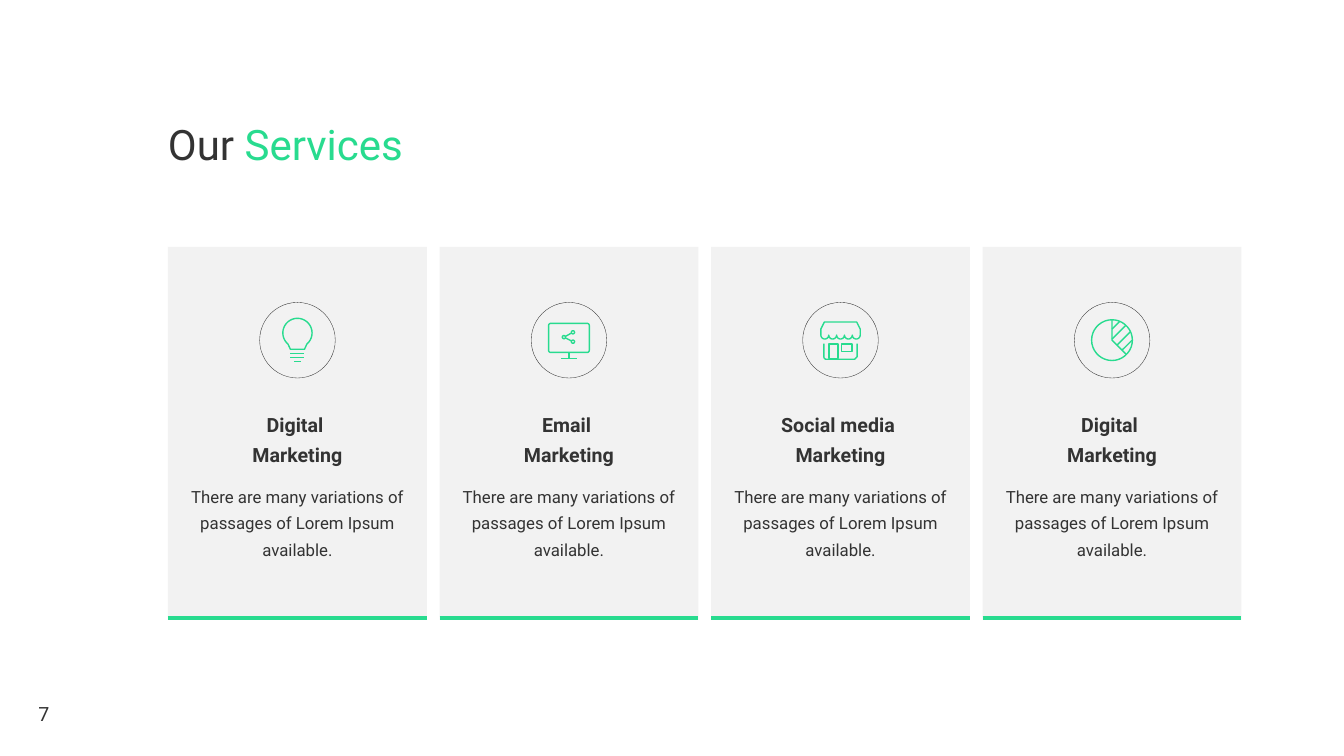
from dataclasses import dataclass
from math import cos, radians, sin

from lxml import etree
from pptx import Presentation, util as u
from pptx.dml.color import RGBColor
from pptx.enum import shapes, text
from pptx.oxml.ns import qn


@dataclass(frozen=True)
class Theme:
    font: str = "Roboto"
    ink: str = "333333"
    accent: str = "28DB8F"
    panel: str = "F2F2F2"
    title_size: int = 30
    heading_size: int = 14
    body_size: int = 12


# The grid has 160 columns and 90 rows, twelve to the inch
COLUMNS, ROWS = 160, 90
CELL = u.Inches(1) / 12
CARD_LEFT, CARD_TOP, CARD_HEIGHT = 20, 29.4, 44.4
CARDS_WIDTH, CARD_GAP = 127.8, 1.5
ACCENT_ROW = 73.6
BADGE_TOP, BADGE_SIZE = 36, 9
ICON_UNIT = 0.12

BODY = "There are many variations of passages of Lorem Ipsum available."


def grid(cells):
    return u.Emu(round(cells * CELL))


def color(value):
    return RGBColor.from_string(value)


# Icon strokes: points measured from the badge centre, in icon units
def arc(x, y, radius, start=0, end=360, step=10):
    return [(x + radius * cos(radians(a)), y + radius * sin(radians(a)))
            for a in range(start, end + 1, step)]


def frame(left, top, right, bottom):
    return [(left, top), (right, top), (right, bottom), (left, bottom), (left, top)]


def bulb():
    glass = [(-7, 9), *arc(0, -7.2, 14.5, 130, 410), (7, 9), (-7, 9)]
    return [glass] + [[(-half, y), (half, y)] for half, y in ((7, 13), (7, 17), (3.5, 21))]


def monitor():
    screen = [*arc(18, 10, 2.2, 0, 90), *arc(-18, 10, 2.2, 90, 180),
              *arc(-18, -14.5, 2.2, 180, 270), *arc(18, -14.5, 2.2, 270, 360), (20.2, 10)]
    nodes = [(4, -7.8), (-5, -3), (4, 1.5)]
    links = [[(-3.6, -3.7), (2.6, -7.1)], [(-3.6, -2.3), (2.6, 0.8)]]
    stand = [[(0, 12.2), (0, 18)], [(-8, 18), (8, 18)]]
    return [screen, *stand, *links, *(arc(x, y, 1.6, step=30) for x, y in nodes)]


def shop():
    awning = [(-19.5, -5), (-19.5, -11), (-16, -18), (16, -18), (19.5, -11), (19.5, -5)]
    for scallop in range(5):
        awning += arc(15.6 - 7.8 * scallop, -5, 3.9, 0, 180, 20)
    walls = [(-16.5, 3.5), *arc(-14, 16.5, 2.5, 180, 90, -10),
             (-14, 19), (14, 19), (16.5, 16.5), (16.5, 3.5)]
    return [awning, walls, frame(-11.5, 4, -2.5, 18.5), frame(1, 4, 11.5, 11)]


def pie():
    wedge = [(0, -20), (0, 0), (14.2, 14.2)]
    hatches = [[(0, -11), (7.5, -18.5)], [(0, -1), (13.7, -14.7)],
               [(5, 5), (18.2, -8.2)], [(10, 10), (19.8, 0.2)]]
    return [arc(0, 0, 20.2), wedge, *hatches]


CARDS = [("Digital \vMarketing", bulb), ("Email \vMarketing", monitor),
         ("Social media \vMarketing", shop), ("Digital \vMarketing", pie)]


class SlideBuilder:
    def __init__(self, deck, theme):
        self.theme = theme
        self.page = deck.slides.add_slide(deck.slide_layouts[5])

    def style(self, para, size, bold=False, align=text.PP_ALIGN.CENTER, spacing=1.0):
        para.alignment = align
        para.line_spacing = spacing
        para.space_before = u.Pt(0)
        para.font.name, para.font.size, para.font.bold = self.theme.font, u.Pt(size), bold
        para.font.color.rgb = color(self.theme.ink)

    def title(self, plain, accented, left, top, width, height):
        box = self.page.shapes.title
        box.left, box.top, box.width, box.height = map(grid, (left, top, width, height))
        body = box.text_frame
        body.auto_size = text.MSO_AUTO_SIZE.NONE
        body.vertical_anchor = text.MSO_ANCHOR.TOP
        body.margin_left = body.margin_right = 0
        body.margin_top = body.margin_bottom = u.Inches(0.1)
        para = body.paragraphs[0]
        para.add_run().text = plain
        span = para.add_run()
        span.text = accented
        self.style(para, self.theme.title_size, align=text.PP_ALIGN.LEFT, spacing=0.9)
        span.font.color.rgb = color(self.theme.accent)

    def page_number(self, number, left, top, width, height):
        box = self.page.shapes.add_textbox(*map(grid, (left, top, width, height)))
        box.text_frame.word_wrap = True
        box.text_frame.vertical_anchor = text.MSO_ANCHOR.MIDDLE
        para = box.text_frame.paragraphs[0]
        para.text = number
        self.style(para, self.theme.heading_size)

    def card(self, heading, left, width):
        group = self.page.shapes.add_group_shape()
        box = group.shapes.add_shape(shapes.MSO_SHAPE.RECTANGLE,
                                     *map(grid, (left, CARD_TOP, width, CARD_HEIGHT)))
        box.shadow.inherit = False
        box.fill.solid()
        box.fill.fore_color.rgb = color(self.theme.panel)
        box.line.fill.background()
        body = box.text_frame
        body.word_wrap = True
        body.vertical_anchor = text.MSO_ANCHOR.BOTTOM
        body.margin_left = body.margin_right = u.Inches(0.2)
        body.margin_top, body.margin_bottom = 0, u.Inches(0.6)
        head = body.paragraphs[0]
        head.text = heading
        self.style(head, self.theme.heading_size, bold=True, spacing=1.3)
        para = body.add_paragraph()
        para.text = BODY
        self.style(para, self.theme.body_size, spacing=1.3)
        para.space_before = u.Pt(10)

        rule = group.shapes.add_connector(
            shapes.MSO_CONNECTOR.STRAIGHT,
            *map(grid, (left, ACCENT_ROW, left + width, ACCENT_ROW)))
        rule.line.color.rgb = color(self.theme.accent)
        rule.line.width = u.Pt(3)
        etree.SubElement(rule.element.spPr, qn("a:effectLst"))

    def outline(self, shape, ink, width):
        shape.shadow.inherit = False
        shape.fill.background()
        shape.line.color.rgb = color(ink)
        shape.line.width = u.Pt(width)

    def badge(self, strokes, center):
        ring = self.page.shapes.add_shape(
            shapes.MSO_SHAPE.OVAL,
            *map(grid, (center - BADGE_SIZE / 2, BADGE_TOP, BADGE_SIZE, BADGE_SIZE)))
        self.outline(ring, self.theme.ink, 0.25)

        middle = BADGE_TOP + BADGE_SIZE / 2
        placed = [[(grid(center + x * ICON_UNIT), grid(middle + y * ICON_UNIT))
                   for x, y in stroke] for stroke in strokes]
        pen = self.page.shapes.build_freeform(*placed[0][0])
        pen.add_line_segments(placed[0][1:], close=False)
        for stroke in placed[1:]:
            pen.move_to(*stroke[0])
            pen.add_line_segments(stroke[1:], close=False)
        self.outline(pen.convert_to_shape(), self.theme.accent, 1)


def main():
    deck = Presentation()
    deck.slide_width, deck.slide_height = grid(COLUMNS), grid(ROWS)
    slide = SlideBuilder(deck, Theme())

    # Title and page number
    slide.title("Our ", "Services", 20, 13.6, 130, 17.2)
    slide.page_number("7", 1.68, 82.56, 7.08, 4.8)

    # Service cards in equal columns
    width = (CARDS_WIDTH - CARD_GAP * (len(CARDS) - 1)) / len(CARDS)
    for index, (heading, icon) in enumerate(CARDS):
        left = CARD_LEFT + index * (width + CARD_GAP)
        slide.card(heading, left, width)
        slide.badge(icon(), left + width / 2)

    deck.save("out.pptx")


if __name__ == "__main__":
    main()
